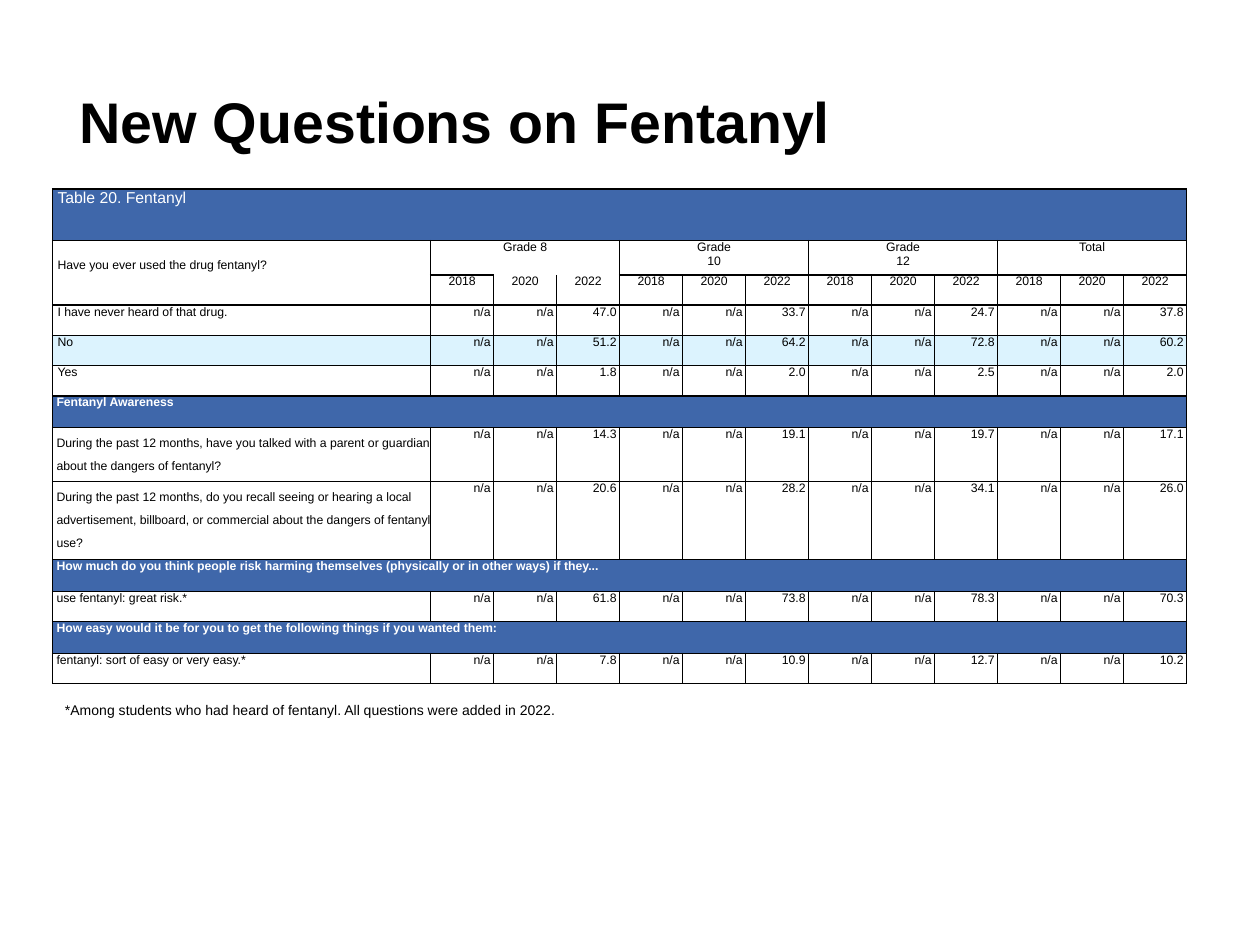
from dataclasses import dataclass
from typing import Optional

from pptx import Presentation
from pptx import util as u
from pptx.dml.color import RGBColor
from pptx.enum import text
from pptx.oxml import parse_xml
from pptx.oxml.ns import nsdecls

COLORS = {"ink": "000000", "white": "FFFFFF", "band": "3F67AA", "tint": "DCF3FE"}
FONT = "Arial"
LEFT, CENTER, RIGHT = (text.PP_ALIGN.LEFT, text.PP_ALIGN.CENTER, text.PP_ALIGN.RIGHT)
GRADES = ["Grade 8", "Grade 10", "Grade 12", "Total"]
YEARS = ["2018", "2020", "2022"]
COLUMNS = 1 + len(GRADES) * len(YEARS)
FIRST_BODY_ROW = 3


@dataclass
class Row:
    label: str
    height: float
    values: Optional[list[str]] = None  # 2022 results; None marks a section band
    fill: Optional[str] = None
    indent: float = 0.08
    leading: Optional[float] = None


ROWS = [
    Row("I have never heard of that drug.", 0.61, ["47.0", "33.7", "24.7", "37.8"], indent=0.1),
    Row("No", 0.61, ["51.2", "64.2", "72.8", "60.2"], fill="tint", indent=0.1),
    Row("Yes", 0.61, ["1.8", "2.0", "2.5", "2.0"], indent=0.1),
    Row("Fentanyl Awareness", 0.64),
    Row("During the past 12 months, have you talked with a parent or guardian "
        "about the dangers of fentanyl?", 1.09,
        ["14.3", "19.1", "19.7", "17.1"], leading=13),
    Row("During the past 12 months, do you recall seeing or hearing a local "
        "advertisement, billboard, or commercial about the dangers of fentanyl use?", 1.57,
        ["20.6", "28.2", "34.1", "26.0"], leading=13),
    Row("How much do you think people risk harming themselves "
        "(physically or in other ways) if they...", 0.64),
    Row("use fentanyl: great risk.*", 0.61, ["61.8", "73.8", "78.3", "70.3"]),
    Row("How easy would it be for you to get the following things if you wanted them:", 0.64),
    Row("fentanyl: sort of easy or very easy.*", 0.61, ["7.8", "10.9", "12.7", "10.2"]),
]


def format_paragraph(p, size: float, color: str = "ink", bold: bool = False) -> None:
    p.font.name, p.font.size, p.font.bold = FONT, u.Pt(size), bold
    p.font.color.rgb = RGBColor.from_string(COLORS[color])


def write_cell(cell, words: str, size: float = 7, color: str = "ink", bold: bool = False,
               align=LEFT, left: float = 0, right: float = 0, top: float = 0,
               leading: Optional[float] = None) -> None:
    cell.margin_left, cell.margin_right = u.Cm(left), u.Cm(right)
    cell.margin_top, cell.margin_bottom = u.Cm(top), 0
    p = cell.text_frame.paragraphs[0]
    p.text, p.alignment = words, align
    if leading:
        p.line_spacing = u.Pt(leading)
    format_paragraph(p, size, color, bold)


def paint_cell(cell, fill: Optional[str], open_sides: str = "") -> None:
    """Border a cell in black, except on its open sides, and fill it."""
    tc_pr = cell._tc.get_or_add_tcPr()
    for side in "LRTB":
        paint = ("<a:noFill/>" if side in open_sides else
                 f'<a:solidFill><a:srgbClr val="{COLORS["ink"]}"/></a:solidFill>')
        tc_pr.append(parse_xml(
            f'<a:ln{side} {nsdecls("a")} w="{u.Pt(1)}">{paint}</a:ln{side}>'))
    if fill:
        cell.fill.solid()
        cell.fill.fore_color.rgb = RGBColor.from_string(COLORS[fill])
    else:
        cell.fill.background()


def add_title(s) -> None:
    sp = s.shapes.title
    sp.left, sp.top, sp.width, sp.height = (u.Cm(v) for v in (1.37, 1.63, 19.8, 1.63))
    tf = sp.text_frame
    tf.margin_left = tf.margin_right = u.Cm(0.23)
    tf.margin_top = tf.margin_bottom = u.Cm(0.1)
    tf.vertical_anchor = text.MSO_ANCHOR.TOP
    p = tf.paragraphs[0]
    p.text, p.alignment = "New Questions on Fentanyl", LEFT
    format_paragraph(p, 32.7, bold=True)


def add_results(s) -> None:
    heights = [1.04, 0.69, 0.61] + [row.height for row in ROWS]
    widths = [7.62] + [1.27] * (COLUMNS - 1)
    table = s.shapes.add_table(len(heights), COLUMNS, u.Cm(1.06), u.Cm(3.81),
                               u.Cm(sum(widths)), u.Cm(sum(heights))).table
    table.first_row = table.horz_banding = False
    for line, height in zip(table.rows, heights):
        line.height = u.Cm(height)
    for column, width in zip(table.columns, widths):
        column.width = u.Cm(width)

    # Fills and borders; no rule between Grade 8 and its last two years
    fills = ["band", None, None] + [r.fill if r.values else "band" for r in ROWS]
    open_cells = {(1, 2): "B", (1, 3): "B", (2, 2): "T", (2, 3): "T"}
    for i, fill in enumerate(fills):
        for j in range(COLUMNS):
            paint_cell(table.cell(i, j), fill, open_cells.get((i, j), ""))

    # Heading rows
    table.cell(0, 0).merge(table.cell(0, COLUMNS - 1))
    write_cell(table.cell(0, 0), "Table 20. Fentanyl", 9, "white", left=0.1)
    table.cell(1, 0).merge(table.cell(2, 0))
    write_cell(table.cell(1, 0), "Have you ever used the drug fentanyl?", left=0.1, top=0.36)
    for g, grade in enumerate(GRADES):
        first = 1 + g * len(YEARS)
        table.cell(1, first).merge(table.cell(1, first + len(YEARS) - 1))
        write_cell(table.cell(1, first), grade, align=CENTER, left=1.44, right=1.44)
        for y, year in enumerate(YEARS):
            write_cell(table.cell(2, first + y), year, align=CENTER)

    # Body rows
    for i, row in enumerate(ROWS, FIRST_BODY_ROW):
        label = table.cell(i, 0)
        if row.values is None:
            label.merge(table.cell(i, COLUMNS - 1))
            write_cell(label, row.label, color="white", bold=True, left=row.indent)
            continue
        write_cell(label, row.label, left=row.indent, leading=row.leading)
        results = [v for value in row.values for v in ("n/a", "n/a", value)]
        for j, result in enumerate(results, 1):
            write_cell(table.cell(i, j), result, align=RIGHT, right=0.06)


def add_footnote(s) -> None:
    sp = s.shapes.add_textbox(u.Cm(1.06), u.Cm(14.02), u.Cm(10.57), u.Cm(0.6))
    sp.text_frame.word_wrap = False
    p = sp.text_frame.paragraphs[0]
    p.text = "*Among students who had heard of fentanyl. All questions were added in 2022."
    format_paragraph(p, 8)


def main() -> None:
    prs = Presentation()
    prs.slide_width, prs.slide_height = u.Cm(25.4), u.Cm(19.05)
    s = prs.slides.add_slide(prs.slide_layouts[5])
    add_title(s)
    add_results(s)
    add_footnote(s)
    prs.save("out.pptx")


if __name__ == "__main__":
    main()
